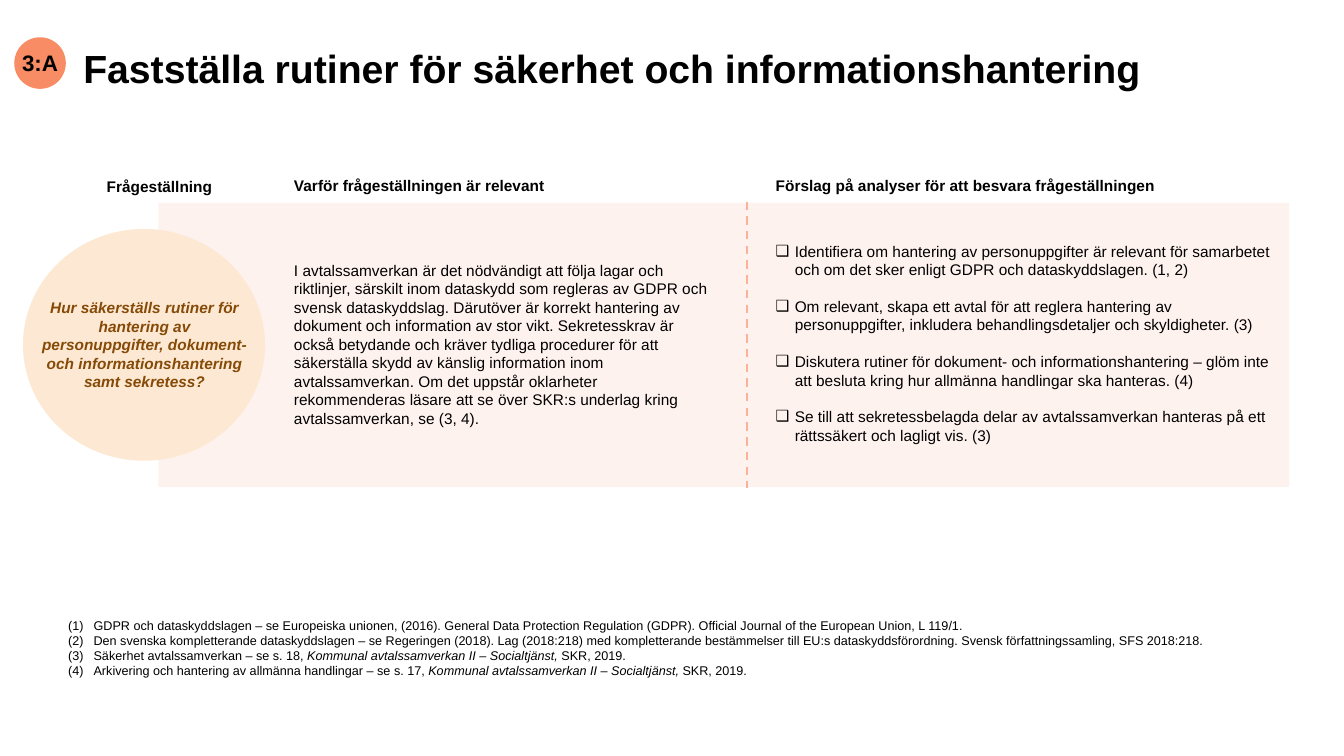
"""Builds the slide on routines for security and information handling."""
from lxml import etree
from pptx import Presentation
from pptx import util as u
from pptx.dml.color import RGBColor
from pptx.enum import dml, shapes, text
from pptx.oxml import ns

BLACK = RGBColor(0x00, 0x00, 0x00)
BROWN = RGBColor(0x85, 0x4A, 0x07)
CORAL = RGBColor(0xF8, 0x8C, 0x64)
SALMON = RGBColor(0xFA, 0xB3, 0x98)
BLUSH = RGBColor(0xFD, 0xD9, 0xCB)
CREAM = RGBColor(0xFD, 0xE9, 0xD3)

HEADINGS = [
    ("Frågeställning", 2.44, 4.34, 4.06),
    ("Varför frågeställningen är relevant", 7.16, 4.32, 7.19),
    ("Förslag på analyser för att besvara frågeställningen", 19.3, 4.32, 11.46),
]
RELEVANCE = (
    "I avtalssamverkan är det nödvändigt att följa lagar och riktlinjer, särskilt inom "
    "dataskydd som regleras av GDPR och svensk dataskyddslag. Därutöver är korrekt hantering "
    "av dokument och information av stor vikt. Sekretesskrav är också betydande och kräver "
    "tydliga procedurer för att säkerställa skydd av känslig information inom avtalssamverkan. "
    "Om det uppstår oklarheter rekommenderas läsare att se över SKR:s underlag kring "
    "avtalssamverkan, se (3, 4)."
)
ANALYSES = [
    "Identifiera om hantering av personuppgifter är relevant för samarbetet och om det sker "
    "enligt GDPR och dataskyddslagen. (1, 2)",
    "Om relevant, skapa ett avtal för att reglera hantering av personuppgifter, inkludera "
    "behandlingsdetaljer och skyldigheter. (3)",
    "Diskutera rutiner för dokument- och informationshantering – glöm inte att besluta kring "
    "hur allmänna handlingar ska hanteras. (4)",
    "Se till att sekretessbelagda delar av avtalssamverkan hanteras på ett rättssäkert och "
    "lagligt vis. (3)",
]
REPORT = "Kommunal avtalssamverkan II – Socialtjänst, "
SOURCES = [
    "GDPR och dataskyddslagen – se Europeiska unionen, (2016). General Data Protection "
    "Regulation (GDPR). Official Journal of the European Union, L 119/1.",
    "Den svenska kompletterande dataskyddslagen – se Regeringen (2018). Lag (2018:218) med "
    "kompletterande bestämmelser till EU:s dataskyddsförordning. Svensk författningssamling, "
    "SFS 2018:218.",
    f"Säkerhet avtalssamverkan – se s. 18, {REPORT}SKR, 2019.",
    f"Arkivering och hantering av allmänna handlingar – se s. 17, {REPORT}SKR, 2019.",
]
QUESTION = (
    "Hur säkerställs rutiner för hantering av personuppgifter, dokument- och "
    "informationshantering samt sekretess?"
)


def write_text(frame, *paragraphs, size=11, color=BLACK, bold=False, italic=False, emphasis=None,
               align=text.PP_ALIGN.LEFT, line_spacing=None, gap=0, bullet=None, indent=0):
    """Fill a text frame with paragraphs in one format; emphasis is a phrase set in italics."""
    for index, content in enumerate(paragraphs):
        paragraph = frame.paragraphs[0] if index == 0 else frame.add_paragraph()
        paragraph.alignment = align
        paragraph.line_spacing = line_spacing
        if index and gap:
            paragraph.space_before = u.Pt(gap)
        if bullet:
            tag, attributes = bullet
            properties = paragraph._p.get_or_add_pPr()
            properties.set("marL", str(u.Cm(indent)))
            properties.set("indent", str(-u.Cm(indent)))
            etree.SubElement(properties, ns.qn("a:buFont"), typeface="Arial")
            etree.SubElement(properties, ns.qn(tag), **attributes)
        before, phrase, after = content.partition(emphasis) if emphasis else (content, "", "")
        for part, slanted in ((before, italic), (phrase, True), (after, italic)):
            if part:
                run = paragraph.add_run()
                run.text = part
                run.font.name = "Arial"
                run.font.size = u.Pt(size)
                run.font.bold = bold
                run.font.italic = slanted
                run.font.color.rgb = color


class Canvas:
    """Holds the style and the current slide; all positions are in centimetres."""

    def __init__(self, slide):
        """Start drawing on a slide."""
        self.shapes = slide.shapes

    def group(self):
        """Return a canvas that draws inside a new group."""
        return Canvas(self.shapes.add_group_shape())

    def shape(self, kind, left, top, width, height, fill, opacity=None):
        """Add a filled shape without outline."""
        shape = self.shapes.add_shape(kind, *map(u.Cm, (left, top, width, height)))
        shape.shadow.inherit = False
        shape.fill.solid()
        shape.fill.fore_color.rgb = fill
        shape.line.fill.background()
        if opacity:
            tint = shape._element.spPr.find(".//" + ns.qn("a:srgbClr"))
            etree.SubElement(tint, ns.qn("a:alpha"), val=str(opacity * 1000))
        return shape

    def divider(self, x, top, bottom):
        """Add a dashed vertical line."""
        line = self.shapes.add_connector(
            shapes.MSO_CONNECTOR.STRAIGHT, *map(u.Cm, (x, top, x, bottom)))
        line.line.color.rgb = SALMON
        line.line.width = u.Pt(1.5)
        line.line.dash_style = dml.MSO_LINE.DASH
        etree.SubElement(line._element.spPr, ns.qn("a:effectLst"))

    def label(self, left, top, width, height, *paragraphs, **style):
        """Add a wrapping text box."""
        frame = self.shapes.add_textbox(*map(u.Cm, (left, top, width, height))).text_frame
        frame.word_wrap = True
        write_text(frame, *paragraphs, **style)

    def badge(self, left, top, diameter, content):
        """Add a circle with a short bold mark."""
        circle = self.shape(shapes.MSO_SHAPE.OVAL, left, top, diameter, diameter, CORAL)
        frame = circle.text_frame
        frame.margin_left = frame.margin_right = frame.margin_top = frame.margin_bottom = 0
        frame.vertical_anchor = text.MSO_ANCHOR.MIDDLE
        frame.word_wrap = False
        write_text(frame, content, size=16, bold=True, align=text.PP_ALIGN.CENTER)


def main():
    """Build and save the slide."""
    deck = Presentation()
    deck.slide_width, deck.slide_height = u.Cm(33.87), u.Cm(19.05)
    canvas = Canvas(deck.slides.add_slide(deck.slide_layouts[6]))

    canvas.shape(shapes.MSO_SHAPE.RECTANGLE, 3.99, 5.11, 28.5, 7.16, BLUSH, opacity=32)
    canvas.divider(18.82, 5.08, 12.29)
    for heading, left, top, width in HEADINGS:
        canvas.label(left, top, width, 0.74, heading, bold=True)
    canvas.label(1.85, 1.07, 27.71, 1.52,
                 "Fastställa rutiner för säkerhet och informationshantering",
                 size=28, bold=True, line_spacing=0.95)
    canvas.label(7.16, 6.45, 11, 4.5, RELEVANCE)
    canvas.label(19.3, 5.97, 13.16, 5.44, *ANALYSES, gap=13,
                 bullet=("a:buChar", {"char": "❑"}), indent=0.48)
    canvas.label(1.47, 15.44, 29.26, 1.8, *SOURCES, size=9, emphasis=REPORT,
                 bullet=("a:buAutoNum", {"type": "arabicParenBoth"}), indent=0.64)
    canvas.badge(0.36, 0.94, 1.3, "3:A")

    question = canvas.group()
    question.shape(shapes.MSO_SHAPE.OVAL, 0.58, 5.77, 6.1, 5.84, CREAM)
    question.label(0.76, 7.39, 5.77, 2.62, QUESTION, color=BROWN, bold=True, italic=True,
                   align=text.PP_ALIGN.CENTER)
    deck.save("out.pptx")


if __name__ == "__main__":
    main()
